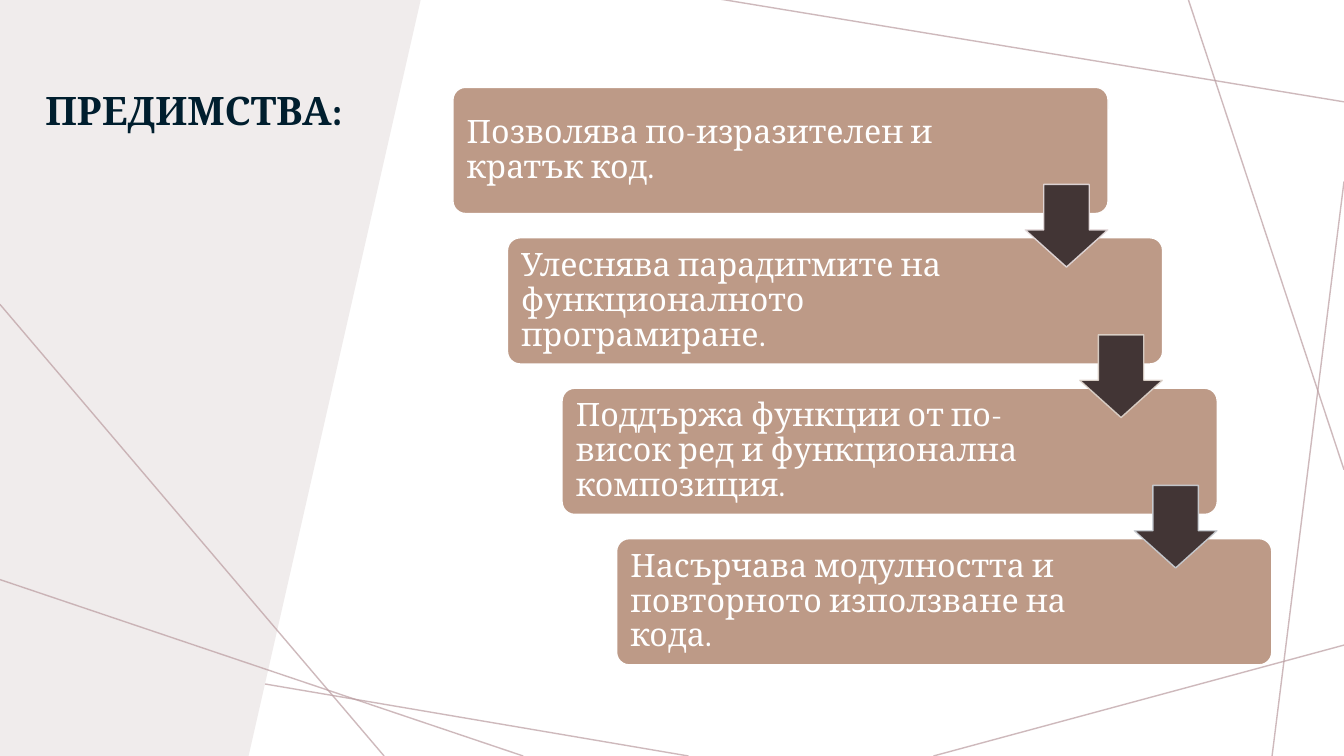
from dataclasses import dataclass
from typing import NamedTuple

from lxml.etree import SubElement
from pptx import Presentation
from pptx.dml.color import RGBColor
from pptx.enum.shapes import MSO_CONNECTOR, MSO_SHAPE
from pptx.enum.text import MSO_ANCHOR, MSO_AUTO_SIZE, PP_ALIGN
from pptx.oxml.ns import qn
from pptx.slide import Slide
from pptx.text.text import TextFrame
from pptx.util import Emu, Inches, Pt


@dataclass(frozen=True)
class Theme:
    font: str = "Cambria"
    title_size: int = 28
    card_size: int = 23
    line_spacing: float = 0.9
    outline: int = 1
    title: str = "001E2E"
    panel: str = "F0ECEC"
    ray: str = "BA9CA0"
    card: str = "BD9A87"
    arrow: str = "423535"
    white: str = "FFFFFF"


class Ray(NamedTuple):
    x1: float
    y1: float
    x2: float
    y2: float


class Box(NamedTuple):
    left: float
    top: float
    width: float
    height: float

    def step(self, index: int) -> "Box":
        return Box(self.left + index * STEP_X, self.top + index * STEP_Y,
                   self.width, self.height)

    def place(self) -> tuple[Emu, Emu, Emu, Emu]:
        return (across(self.left), down(self.top),
                across(self.width), down(self.height))


class Advantage(NamedTuple):
    wording: str
    arrow_outline: str | None


THEME = Theme()
SLIDE_WIDTH, SLIDE_HEIGHT = Inches(13.33), Inches(7.5)

# Shares are percentages of the slide's width and height.
STEP_X, STEP_Y = 4.06, 19.9
TITLE = Box(2.63, 11.47, 26.1, 27.07)
FIRST_CARD = Box(33.7, 11.55, 48.75, 16.7)
FIRST_ARROW = Box(76.28, 24.4, 6.15, 10.93)
PANEL = [(0, 0), (31.3, 0), (18.5, 100), (0, 100)]
BACK_RAYS = [
    Ray(25.58, 0, 0, 10),
    Ray(7.43, 0, 0, 95.47),
    Ray(51.23, 100, -0.38, 84.4),
    Ray(100, 85.33, 69.45, 100),
    Ray(100, 24, 94.65, 100),
    Ray(100, 62.13, 88.43, 0),
    Ray(100, 13.47, 53.55, -0.13),
]
FRONT_RAYS = [Ray(0, 40.27, 28.58, 100), Ray(38.93, 100, 0, 76.67)]
ADVANTAGES = [
    Advantage("Позволява по-изразителен и кратък код.", "E7DEDF"),
    Advantage("Улеснява парадигмите на функционалното програмиране.", "E1D7CE"),
    Advantage("Поддържа функции от по-висок ред и функционална композиция.", "CCD1D7"),
    Advantage("Насърчава модулността и повторното използване на кода.", None),
]


def across(share: float) -> Emu:
    return Emu(round(SLIDE_WIDTH * share / 100))


def down(share: float) -> Emu:
    return Emu(round(SLIDE_HEIGHT * share / 100))


def color(code: str) -> RGBColor:
    return RGBColor.from_string(code)


def set_outline(drawn, code: str, opacity: int = 100) -> None:
    drawn.line.color.rgb = color(code)
    drawn.line.width = Pt(THEME.outline)
    if opacity < 100:
        tint = drawn.element.spPr.find(f"{qn('a:ln')}//{qn('a:srgbClr')}")
        SubElement(tint, qn("a:alpha")).set("val", str(opacity * 1000))


def write(frame: TextFrame, wording: str, size: int, code: str, bold: bool) -> None:
    frame.word_wrap = True
    frame.auto_size = MSO_AUTO_SIZE.NONE
    frame.text = wording
    paragraph = frame.paragraphs[0]
    paragraph.alignment = PP_ALIGN.LEFT
    paragraph.line_spacing = THEME.line_spacing
    font = paragraph.runs[0].font
    font.name, font.size, font.bold = THEME.font, Pt(size), bold
    font.color.rgb = color(code)


def draw_ray(slide: Slide, ray: Ray) -> None:
    line = slide.shapes.add_connector(
        MSO_CONNECTOR.STRAIGHT,
        across(ray.x1), down(ray.y1), across(ray.x2), down(ray.y2))
    set_outline(line, THEME.ray, 70)
    SubElement(line.element.spPr, qn("a:effectLst"))


def draw_panel(slide: Slide) -> None:
    corners = [(across(x), down(y)) for x, y in PANEL]
    builder = slide.shapes.build_freeform(*corners[0])
    builder.add_line_segments(corners[1:], close=True)
    panel = builder.convert_to_shape()
    panel.shadow.inherit = False
    panel.fill.solid()
    panel.fill.fore_color.rgb = color(THEME.panel)
    panel.line.fill.background()


def draw_title(slide: Slide) -> None:
    title = slide.shapes.title
    title.left, title.top, title.width, title.height = TITLE.place()
    title.text_frame.vertical_anchor = MSO_ANCHOR.TOP
    write(title.text_frame, "ПРЕДИМСТВА:", THEME.title_size, THEME.title, True)
    title.text_frame.paragraphs[0].space_after = Pt(6)
    title.element.getparent().append(title.element)


def draw_card(slide: Slide, box: Box, wording: str) -> None:
    card = slide.shapes.add_shape(MSO_SHAPE.ROUNDED_RECTANGLE, *box.place())
    card.adjustments[0] = 0.1
    card.shadow.inherit = False
    card.fill.solid()
    card.fill.fore_color.rgb = color(THEME.card)
    set_outline(card, THEME.white)
    frame = card.text_frame
    frame.vertical_anchor = MSO_ANCHOR.MIDDLE
    frame.margin_left, frame.margin_right = across(0.75), across(11.2)
    frame.margin_top = frame.margin_bottom = down(1.33)
    write(frame, wording, THEME.card_size, THEME.white, False)


def draw_arrow(slide: Slide, box: Box, outline: str) -> None:
    arrow = slide.shapes.add_shape(MSO_SHAPE.DOWN_ARROW, *box.place())
    arrow.adjustments[0] = 0.45
    arrow.adjustments[1] = 0.55
    arrow.adjustments[0], arrow.adjustments[1] = 0.55, 0.45
    arrow.shadow.inherit = False
    arrow.fill.solid()
    arrow.fill.fore_color.rgb = color(THEME.arrow)
    set_outline(arrow, outline, 90)


def main() -> None:
    deck = Presentation()
    deck.slide_width, deck.slide_height = SLIDE_WIDTH, SLIDE_HEIGHT
    slide = deck.slides.add_slide(deck.slide_layouts.get_by_name("Title Only"))
    for ray in BACK_RAYS:
        draw_ray(slide, ray)
    draw_panel(slide)
    draw_title(slide)
    for ray in FRONT_RAYS:
        draw_ray(slide, ray)
    for index, advantage in enumerate(ADVANTAGES):
        draw_card(slide, FIRST_CARD.step(index), advantage.wording)
    for index, advantage in enumerate(ADVANTAGES):
        if advantage.arrow_outline:
            draw_arrow(slide, FIRST_ARROW.step(index), advantage.arrow_outline)
    deck.save("out.pptx")


if __name__ == "__main__":
    main()
